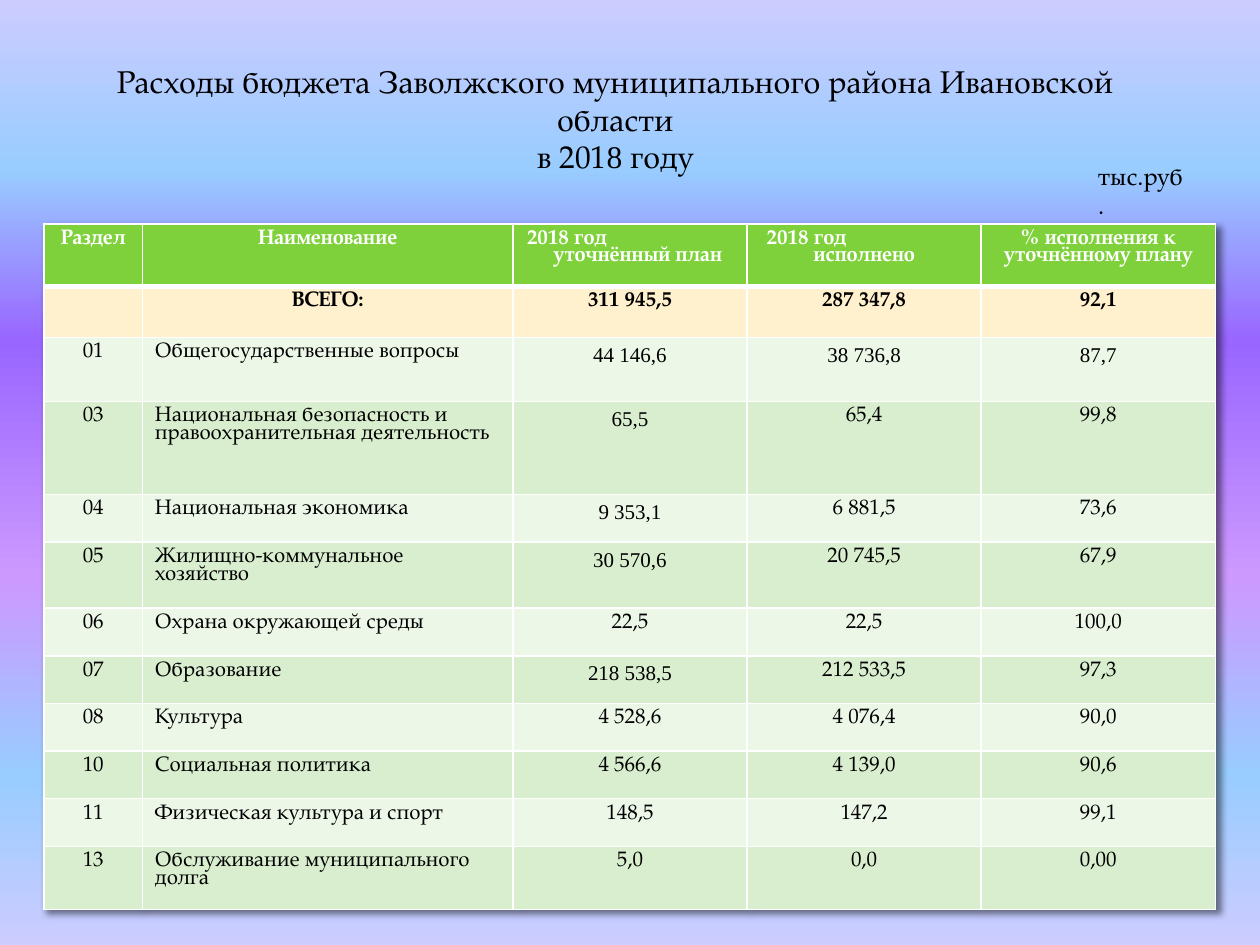
import pptx
import pptx.dml.color
import pptx.enum.text
import pptx.oxml
import pptx.oxml.ns
import pptx.util
from pptx.util import Cm

SERIF, TIMES = "TeX Gyre Pagella", "Times New Roman"
ALIGN = pptx.enum.text.PP_ALIGN
NS = pptx.oxml.ns.nsdecls("a")


def color(value):
    return pptx.dml.color.RGBColor.from_string(value)


def write(para, text, tint="000000", align=ALIGN.CENTER, **formats):
    """Add one formatted span to a paragraph."""
    para.alignment = align
    span = para.add_run()
    span.text = text
    span.font.color.rgb = color(tint)
    for name, value in ({"name": SERIF} | formats).items():
        setattr(span.font, name, value)


deck = pptx.Presentation()
deck.slide_width, deck.slide_height = Cm(25.4), Cm(19.05)
page = deck.slides.add_slide(deck.slide_layouts[5])

# Background gradient, top to bottom
backdrop = page.background.fill
backdrop.gradient()
backdrop.gradient_angle = 270
stops = page.element.find(".//{*}gsLst")
stops.clear()
for place, tint in ((0, "CCCCFF"), (18, "99CCFF"), (36, "9966FF"),
                    (61, "CC99FF"), (82, "99CCFF"), (100, "CCCCFF")):
    stops.append(pptx.oxml.parse_xml(
        f'<a:gs {NS} pos="{place * 1000}"><a:srgbClr val="{tint}"/></a:gs>'))

# Title and unit of measure
title = page.shapes.title
title.left, title.top, title.width, title.height = Cm(1.7), Cm(1.12), Cm(21.41), Cm(1.8)
unit = page.shapes.add_textbox(Cm(21.89), Cm(3.12), Cm(2.29), Cm(0.86))
frame_format = {"word_wrap": True,
                "auto_size": pptx.enum.text.MSO_AUTO_SIZE.NONE,
                "vertical_anchor": pptx.enum.text.MSO_ANCHOR.TOP}
for box in (title, unit):
    for name, value in frame_format.items():
        setattr(box.text_frame, name, value)

title_size = pptx.util.Pt(18)
write(title.text_frame.paragraphs[0],
      "Расходы бюджета Заволжского муниципального района Ивановской области",
      size=title_size)
year_line = title.text_frame.add_paragraph()
for text, font in (("в 201", SERIF), ("8", TIMES), (" году", SERIF)):
    write(year_line, text, name=font, size=title_size)
write(unit.text_frame.paragraphs[0], "тыс.руб.", align=ALIGN.LEFT, size=pptx.util.Pt(14))

# Budget table: header, total, then one row per section
rows = [
    ("Раздел", "Наименование", "2018 год\nуточнённый план", "2018 год\nисполнено",
     "% исполнения к уточнённому плану"),
    ("", "ВСЕГО:", "311 945,5", "287 347,8", "92,1"),
    ("01", "Общегосударственные вопросы", "44 146,6", "38 736,8", "87,7"),
    ("03", "Национальная безопасность и правоохранительная деятельность",
     "65,5", "65,4", "99,8"),
    ("04", "Национальная экономика", "9 353,1", "6 881,5", "73,6"),
    ("05", "Жилищно-коммунальное хозяйство", "30 570,6", "20 745,5", "67,9"),
    ("06", "Охрана окружающей среды", "22,5", "22,5", "100,0"),
    ("07", "Образование", "218 538,5", "212 533,5", "97,3"),
    ("08", "Культура", "4 528,6", "4 076,4", "90,0"),
    ("10", "Социальная политика", "4 566,6", "4 139,0", "90,6"),
    ("11", "Физическая культура и спорт", "148,5", "147,2", "99,1"),
    ("13", "Обслуживание муниципального долга", "5,0", "0,0", "0,00"),
]
widths = [1.98, 7.47, 4.72, 4.72, 4.72]
heights = [1.25, 0.96, 1.29, 1.88, 0.96, 1.33] + [0.96] * 5 + [1.27]
times_cells = {(2, 2), (2, 3), (2, 4), (3, 2), (4, 2), (5, 2), (7, 2)}
# Left indents of the two header lines, by column
header_indents = {2: (0.03, 0.32), 3: (0.14, 0)}

table = page.shapes.add_table(len(rows), len(widths), Cm(0.89), Cm(4.52),
                              Cm(sum(widths)), Cm(sum(heights))).table
table.horz_banding = False
for column, width in zip(table.columns, widths):
    column.width = Cm(width)
for line, height in zip(table.rows, heights):
    line.height = Cm(height)

# Soft shadow under the table
table._tbl.tblPr.insert(0, pptx.oxml.parse_xml(
    f'<a:effectLst {NS}><a:outerShdw blurRad="50800" dist="38100" dir="2700000">'
    '<a:srgbClr val="000000"><a:alpha val="50000"/></a:srgbClr></a:outerShdw></a:effectLst>'))

for r, row in enumerate(rows):
    fill = ("7FD13B", "FFF1CE")[r] if r < 2 else ("ECF7E8", "D8EECE")[r % 2]
    for c, text in enumerate(row):
        cell = table.cell(r, c)
        # White borders, thick between header and body
        for side in "LRTB":
            points = 3 if (r, side) in ((0, "B"), (1, "T")) else 1
            cell._tc.get_or_add_tcPr().append(pptx.oxml.parse_xml(
                f'<a:ln{side} {NS} w="{points * 12700}"><a:solidFill>'
                f'<a:srgbClr val="FFFFFF"/></a:solidFill></a:ln{side}>'))
        cell.fill.solid()
        cell.fill.fore_color.rgb = color(fill)

        # Cell text
        is_times = (r, c) in times_cells
        parts = text.split("\n") if text else []
        for i, part in enumerate(parts):
            para = cell.text_frame.paragraphs[0] if i == 0 else cell.text_frame.add_paragraph()
            para.line_spacing = 1.0 if is_times else 0.83
            is_left = (c == 1 and r > 1) or (len(parts) == 2 and i == 0)
            write(para, part, "FFFFFF" if r == 0 else "000000",
                  ALIGN.LEFT if is_left else ALIGN.CENTER,
                  name=TIMES if is_times else SERIF,
                  size=pptx.util.Pt(12), bold=r < 2)
            if len(parts) == 2:
                para._p.get_or_add_pPr().set("marL", str(Cm(header_indents[c][i])))

deck.save("out.pptx")
